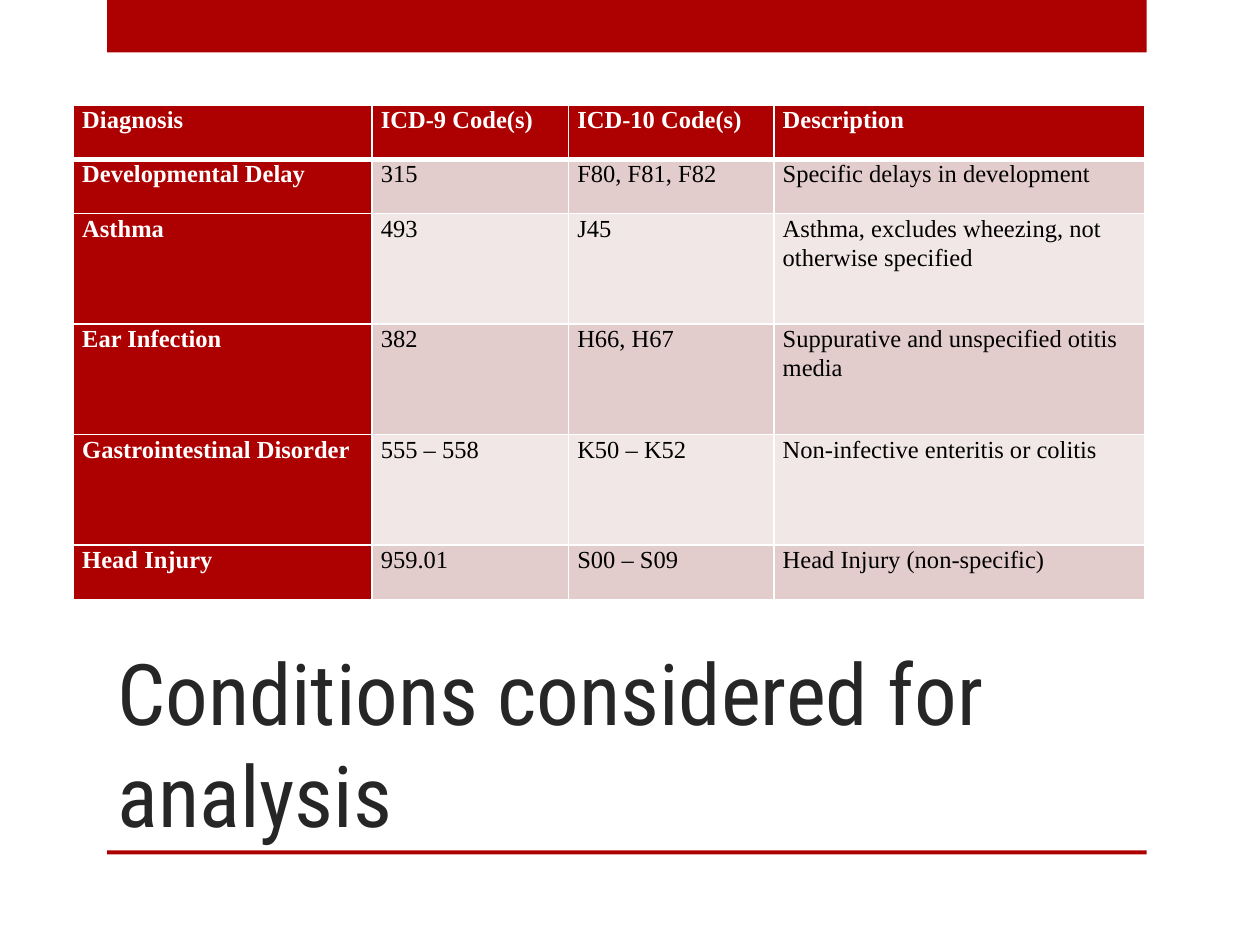
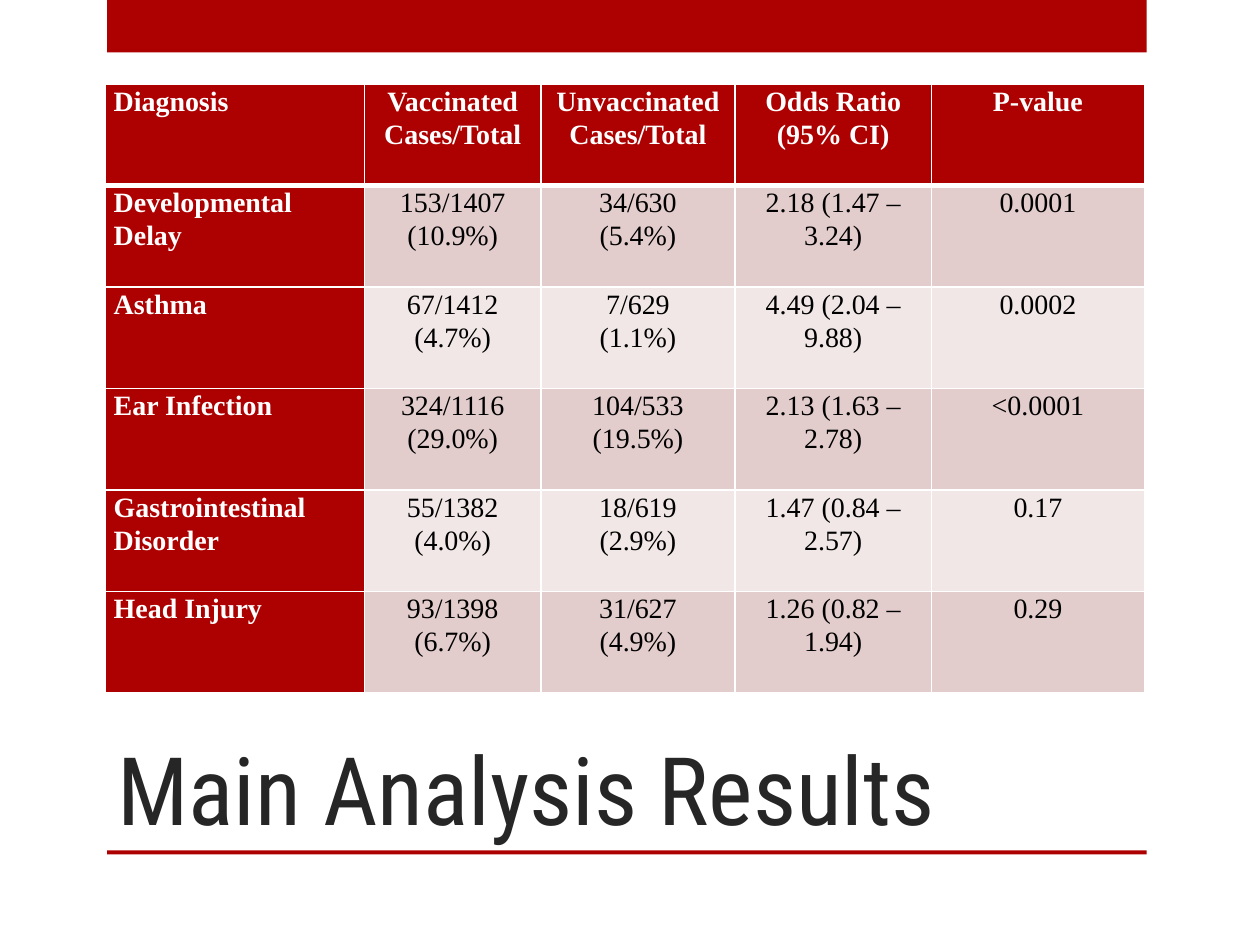
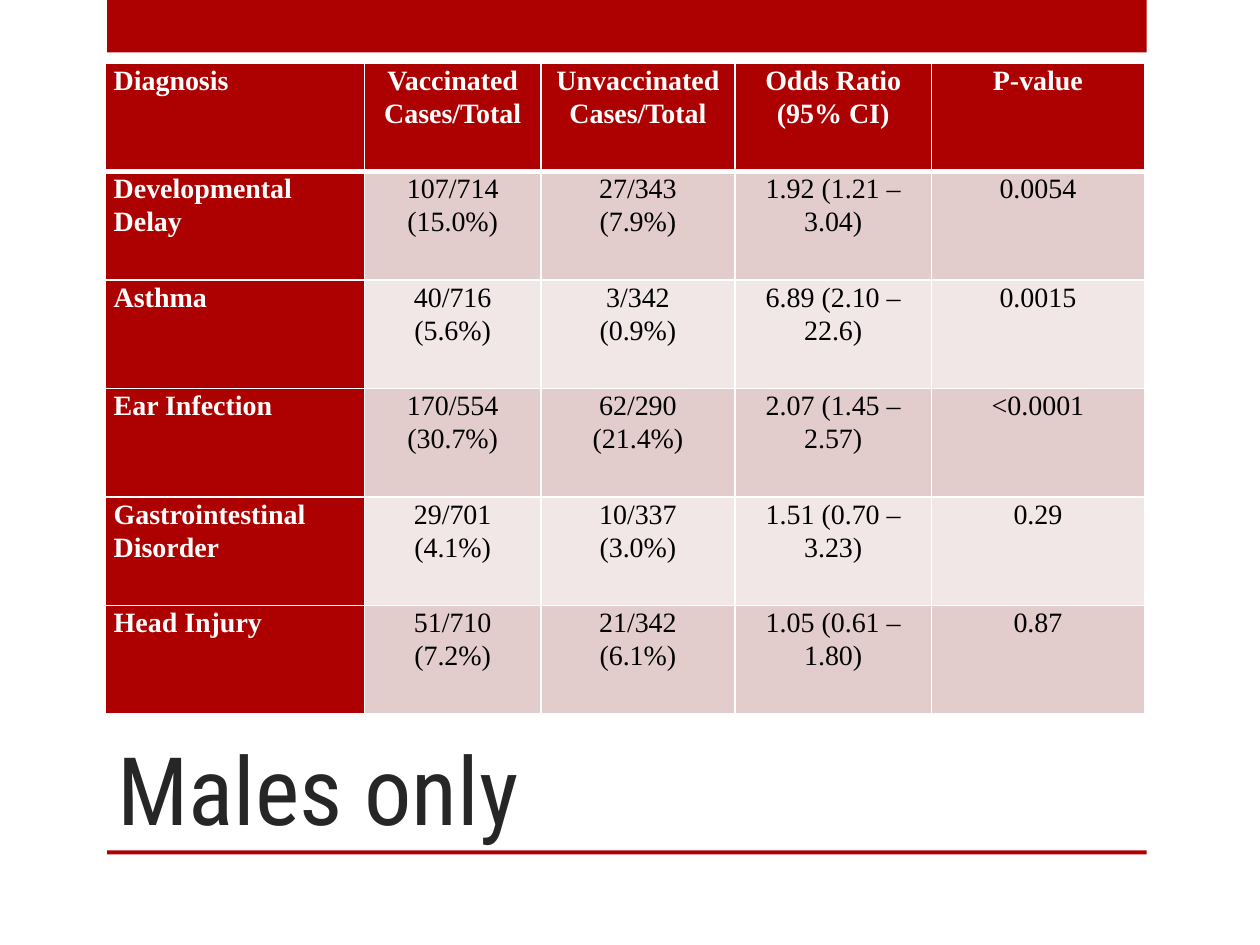
from lxml.etree import SubElement
from pptx import Presentation
from pptx.dml.color import RGBColor
from pptx.enum.shapes import MSO_SHAPE
from pptx.enum.text import MSO_ANCHOR, PP_ALIGN
from pptx.oxml.ns import qn
from pptx.util import Pt

RED, PINK, PALE = "AD0101", "E3CCCC", "F1E7E7"
WHITE, BLACK, TITLE_GREY = "FFFFFF", "000000", "262626"
TITLE_FONT, TABLE_FONT = "Roboto Condensed", "Times New Roman"

# left, top, width, height
BANDS = [(61.2, 0, 594, 30), (61.2, 486, 594, 2.2)]
TITLE_BOX = (60, 360, 534, 126)

CODE_ROWS = [
    ("Diagnosis", "ICD-9 Code(s)", "ICD-10 Code(s)", "Description"),
    ("Developmental Delay", "315", "F80, F81, F82", "Specific delays in development"),
    ("Asthma", "493", "J45", "Asthma, excludes wheezing, not otherwise specified"),
    ("Ear Infection", "382", "H66, H67", "Suppurative and unspecified otitis media"),
    ("Gastrointestinal Disorder", "555 – 558", "K50 – K52", "Non-infective enteritis or colitis"),
    ("Head Injury", "959.01", "S00 – S09", "Head Injury (non-specific)"),
]
RESULT_HEADER = ("Diagnosis", "Vaccinated\nCases/Total", "Unvaccinated\nCases/Total",
                 "Odds Ratio\n(95% CI)", "P-value")
MAIN_RESULTS = [
    RESULT_HEADER,
    ("Developmental Delay", "153/1407 (10.9%)", "34/630\n(5.4%)", "2.18 (1.47 – 3.24)", "0.0001"),
    ("Asthma", "67/1412\n(4.7%)", "7/629\n(1.1%)", "4.49 (2.04 – 9.88)", "0.0002"),
    ("Ear Infection", "324/1116 (29.0%)", "104/533\n(19.5%)", "2.13 (1.63 – 2.78)", "<0.0001"),
    ("Gastrointestinal Disorder", "55/1382\n(4.0%)", "18/619\n(2.9%)", "1.47 (0.84 – 2.57)", "0.17"),
    ("Head Injury", "93/1398\n(6.7%)", "31/627\n(4.9%)", "1.26 (0.82 – 1.94)", "0.29"),
]
MALE_RESULTS = [
    RESULT_HEADER,
    ("Developmental Delay", "107/714 (15.0%)", "27/343\n(7.9%)", "1.92 (1.21 – 3.04)", "0.0054"),
    ("Asthma", "40/716\n(5.6%)", "3/342\n(0.9%)", "6.89 (2.10 – 22.6)", "0.0015"),
    ("Ear Infection", "170/554\n(30.7%)", "62/290\n(21.4%)", "2.07 (1.45 – 2.57)", "<0.0001"),
    ("Gastrointestinal Disorder", "29/701\n(4.1%)", "10/337\n(3.0%)", "1.51 (0.70 – 3.23)", "0.29"),
    ("Head Injury", "51/710\n(7.2%)", "21/342\n(6.1%)", "1.05 (0.61 – 1.80)", "0.87"),
]

RESULT_STYLE = {"title_size": 54, "left": 60, "text_size": 16, "value_align": PP_ALIGN.CENTER,
                "columns": [148.3, 100.8, 110.9, 112.3, 121.7]}
SLIDES = [
    {"title": "Conditions considered for analysis", "title_size": 48.6, "rows": CODE_ROWS,
     "left": 42, "top": 60, "text_size": 14, "value_align": PP_ALIGN.LEFT,
     "columns": [170.6, 112.3, 117.4, 211.7], "heights": [31, 31, 63.2, 63.2, 63.2, 31]},
    {"title": "Main Analysis Results", "rows": MAIN_RESULTS, "top": 48,
     "heights": [58] * 6, **RESULT_STYLE},
    {"title": "Males only", "rows": MALE_RESULTS, "top": 36,
     "heights": [62] * 6, **RESULT_STYLE},
]


def paint(fill, colour):
    fill.solid()
    fill.fore_color.rgb = RGBColor.from_string(colour)


def style_runs(paragraph, font_name, size, colour, bold=False):
    for run in paragraph.runs:
        run.font.name = font_name
        run.font.size = Pt(size)
        run.font.bold = bold
        run.font.color.rgb = RGBColor.from_string(colour)


def add_bands(slide):
    for band_box in BANDS:
        band = slide.shapes.add_shape(MSO_SHAPE.RECTANGLE, *map(Pt, band_box))
        band.shadow.inherit = False
        paint(band.fill, RED)
        band.line.fill.background()


def add_title(slide, title, size):
    frame = slide.shapes.add_textbox(*map(Pt, TITLE_BOX)).text_frame
    frame.word_wrap = True
    frame.vertical_anchor = MSO_ANCHOR.BOTTOM
    frame.text = title
    style_runs(frame.paragraphs[0], TITLE_FONT, size, TITLE_GREY)


def add_borders(cell, top, bottom):
    """Draw white cell borders; top and bottom are widths in points."""
    properties = cell._tc.get_or_add_tcPr()
    for side, width in (("L", 1), ("R", 1), ("T", top), ("B", bottom)):
        line = SubElement(properties, qn(f"a:ln{side}"), w=str(Pt(width)))
        SubElement(SubElement(line, qn("a:solidFill")), qn("a:srgbClr"), val=WHITE)


def fill_cell(cell, text, row, column, content):
    is_heading = row == 0 or column == 0
    add_borders(cell, top=3 if row == 1 else 1, bottom=3 if row == 0 else 1)
    paint(cell.fill, RED if is_heading else PINK if row % 2 else PALE)
    cell.margin_left = cell.margin_right = Pt(5)
    cell.margin_top = cell.margin_bottom = 0
    cell.text_frame.text = text
    for paragraph in cell.text_frame.paragraphs:
        paragraph.line_spacing = 1.07
        paragraph.alignment = content["value_align"] if column else PP_ALIGN.LEFT
        style_runs(paragraph, TABLE_FONT, content["text_size"],
                   WHITE if is_heading else BLACK, is_heading)


def add_diagnosis_table(slide, content):
    rows, columns, heights = content["rows"], content["columns"], content["heights"]
    box = (content["left"], content["top"], sum(columns), sum(heights))
    table = slide.shapes.add_table(len(rows), len(columns), *map(Pt, box)).table
    for column, width in zip(table.columns, columns):
        column.width = Pt(width)
    for row, height in zip(table.rows, heights):
        row.height = Pt(height)
    for r, texts in enumerate(rows):
        for c, text in enumerate(texts):
            fill_cell(table.cell(r, c), text, r, c, content)


def main():
    deck = Presentation()
    deck.slide_width, deck.slide_height = Pt(720), Pt(540)
    for content in SLIDES:
        slide = deck.slides.add_slide(deck.slide_layouts[6])
        add_bands(slide)
        add_title(slide, content["title"], content["title_size"])
        add_diagnosis_table(slide, content)
    deck.save("out.pptx")


if __name__ == "__main__":
    main()
